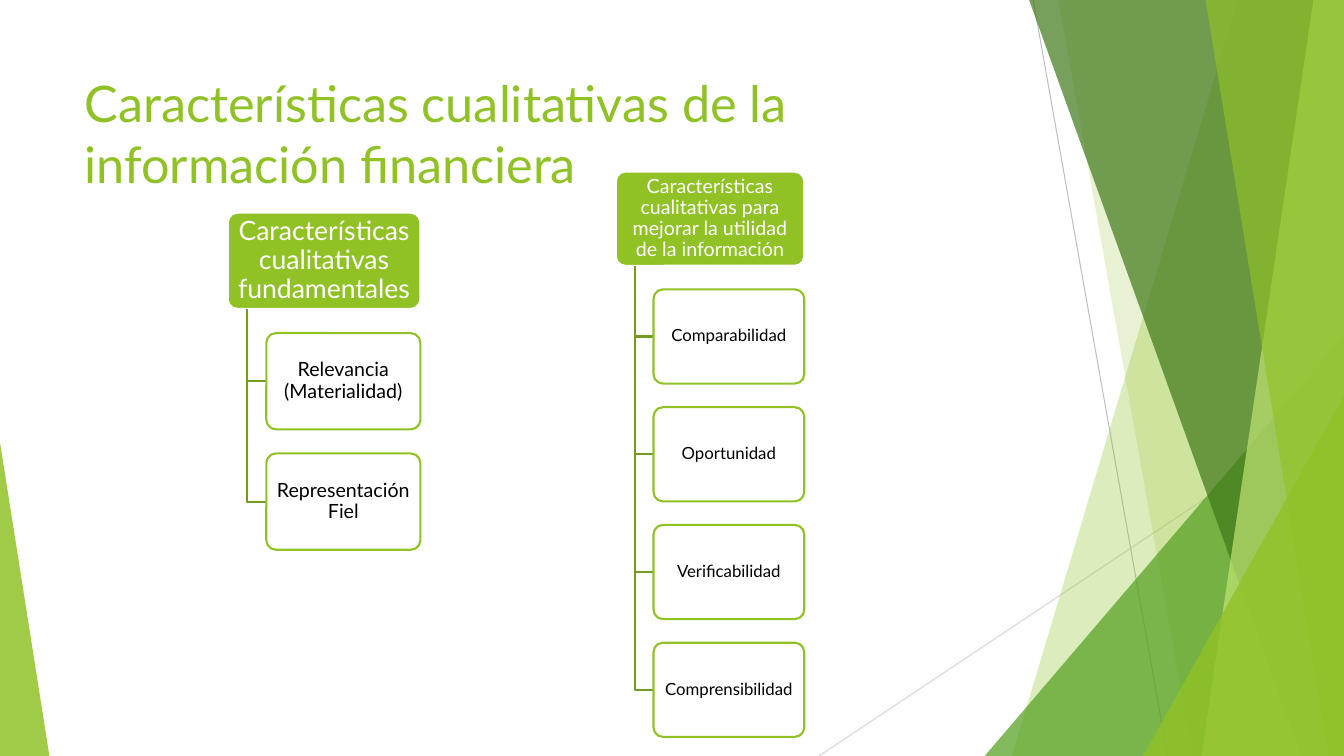
from lxml.etree import SubElement
from pptx import Presentation
from pptx.dml.color import RGBColor
from pptx.enum.shapes import MSO_CONNECTOR as Connector, MSO_SHAPE as Shape
from pptx.enum.text import MSO_ANCHOR as Anchor, PP_ALIGN as Align
from pptx.oxml.ns import qn
from pptx.util import Pt

WIDTH, HEIGHT = 960, 540
GREEN, DARK_GREEN, WHITE, BLACK = "90C226", "739B1E", "FFFFFF", "000000"

# Decorative background: outlines as corner points, triangles as boxes
RAYS = [("BFBFBF", (738, 0), (834, HEIGHT)), ("D9D9D9", (WIDTH, 290), (585, HEIGHT))]
BACK_BANDS = [(GREEN, 30, 884.2, 722.9), (GREEN, 20, 756, 851.8)]
FRONT_BANDS = [("3F7819", 70, 735.1, 929.5), ("C0E474", 70, 938.2, 858.2),
               (GREEN, 65, 861.1, 949)]
BACK_TRIANGLE = ("54A021", 72, 703.4, 239.8, 256.6, 1)
FRONT_TRIANGLES = [(GREEN, 80, 816.5, 283, 143.5, 1), (GREEN, 85, 0, 316, 35.3, 0)]

# Hierarchies: left, top, box height, heading and its size, items and their size
BRANCHES = [
    (162.7, 151.9, 68.8, "Características cualitativas fundamentales", 19,
     ["Relevancia (Materialidad)", "Representación Fiel"], 14),
    (439.9, 122.6, 67.3,
     "Características cualitativas para mejorar la utilidad de la información", 14,
     ["Comparabilidad", "Oportunidad", "Verificabilidad", "Comprensibilidad"], 12),
]


def color(hex_string):
    return RGBColor.from_string(hex_string)


def apply_format(target, values):
    for name, value in values.items():
        setattr(target, name, value)


def set_fill(shape, hex_string, opacity=100):
    shape.shadow.inherit = False
    shape.fill.solid()
    shape.fill.fore_color.rgb = color(hex_string)
    if opacity < 100:
        scheme = shape.fill._xPr.find(qn("a:solidFill"))[0]
        SubElement(scheme, qn("a:alpha")).set("val", str(opacity * 1000))


def set_line(shape, hex_string, width):
    shape.line.color.rgb = color(hex_string)
    shape.line.width = Pt(width)


def add_outline(slide, points, close):
    corners = [(Pt(x), Pt(y)) for x, y in points]
    builder = slide.shapes.build_freeform(*corners[0])
    builder.add_line_segments(corners[1:], close=close)
    shape = builder.convert_to_shape()
    shape.shadow.inherit = False
    return shape


def add_ray(slide, hex_string, start, end):
    ray = slide.shapes.add_connector(Connector.STRAIGHT, *map(Pt, start + end))
    set_line(ray, hex_string, 0.75)
    SubElement(ray._element.spPr, qn("a:effectLst"))


def add_band(slide, hex_string, opacity, top_x, bottom_x):
    corners = [(top_x, 0), (WIDTH, 0), (WIDTH, HEIGHT), (bottom_x, HEIGHT)]
    band = add_outline(slide, corners, close=True)
    set_fill(band, hex_string, opacity)
    band.line.fill.background()


def add_triangle(slide, hex_string, opacity, left, top, width, apex):
    triangle = slide.shapes.add_shape(
        Shape.ISOSCELES_TRIANGLE, Pt(left), Pt(top), Pt(width), Pt(HEIGHT - top))
    triangle.adjustments[0] = apex
    set_fill(triangle, hex_string, opacity)
    triangle.line.fill.background()


def add_text(shape, text, size, hex_string, frame_format, paragraph_format):
    frame = shape.text_frame
    apply_format(frame, {"word_wrap": True, **frame_format})
    paragraph = frame.paragraphs[0]
    paragraph.text = text
    apply_format(paragraph, paragraph_format)
    apply_format(paragraph.font, {"name": "Lato", "size": Pt(size)})
    paragraph.font.color.rgb = color(hex_string)


def add_title(slide, text):
    box = slide.shapes.add_textbox(Pt(53.3), Pt(48), Pt(676.8), Pt(104))
    add_text(box, text, 36, GREEN, {"vertical_anchor": Anchor.TOP}, {"alignment": Align.LEFT})


def add_box(slide, left, top, width, height, text, size, fill, opacity, line, text_color):
    box = slide.shapes.add_shape(
        Shape.ROUNDED_RECTANGLE, Pt(left), Pt(top), Pt(width), Pt(height))
    box.adjustments[0] = 0.1
    set_fill(box, fill, opacity)
    set_line(box, line, 1.5)
    side, edge = Pt(0.15 * size), Pt(0.1 * size)
    add_text(box, text, size, text_color,
             {"vertical_anchor": Anchor.MIDDLE, "margin_left": side, "margin_right": side,
              "margin_top": edge, "margin_bottom": edge},
             {"alignment": Align.CENTER, "line_spacing": 0.9})


def add_branch(slide, left, top, height, heading, heading_size, items, item_size):
    # All proportions follow from the box height
    trunk_x, item_left = left + 0.2 * height, left + 0.4 * height
    add_box(slide, left, top, 2 * height, height, heading, heading_size,
            GREEN, 100, WHITE, WHITE)
    for row, item in enumerate(items, 1):
        item_top = top + row * 1.25 * height
        middle = item_top + height / 2
        elbow = add_outline(
            slide, [(trunk_x, top + height), (trunk_x, middle), (item_left, middle)],
            close=False)
        elbow.fill.background()
        set_line(elbow, DARK_GREEN, 1.5)
        add_box(slide, item_left, item_top, 1.6 * height, height, item, item_size,
                WHITE, 90, GREEN, BLACK)


def main():
    presentation = Presentation()
    apply_format(presentation, {"slide_width": Pt(WIDTH), "slide_height": Pt(HEIGHT)})
    slide = presentation.slides.add_slide(presentation.slide_layouts[6])

    # Background, from back to front
    for ray in RAYS:
        add_ray(slide, *ray)
    for band in BACK_BANDS:
        add_band(slide, *band)
    add_triangle(slide, *BACK_TRIANGLE)
    for band in FRONT_BANDS:
        add_band(slide, *band)
    for triangle in FRONT_TRIANGLES:
        add_triangle(slide, *triangle)

    # Title and hierarchies
    add_title(slide, "Características cualitativas de la información financiera")
    for branch in BRANCHES:
        add_branch(slide, *branch)

    presentation.save("out.pptx")


if __name__ == "__main__":
    main()
